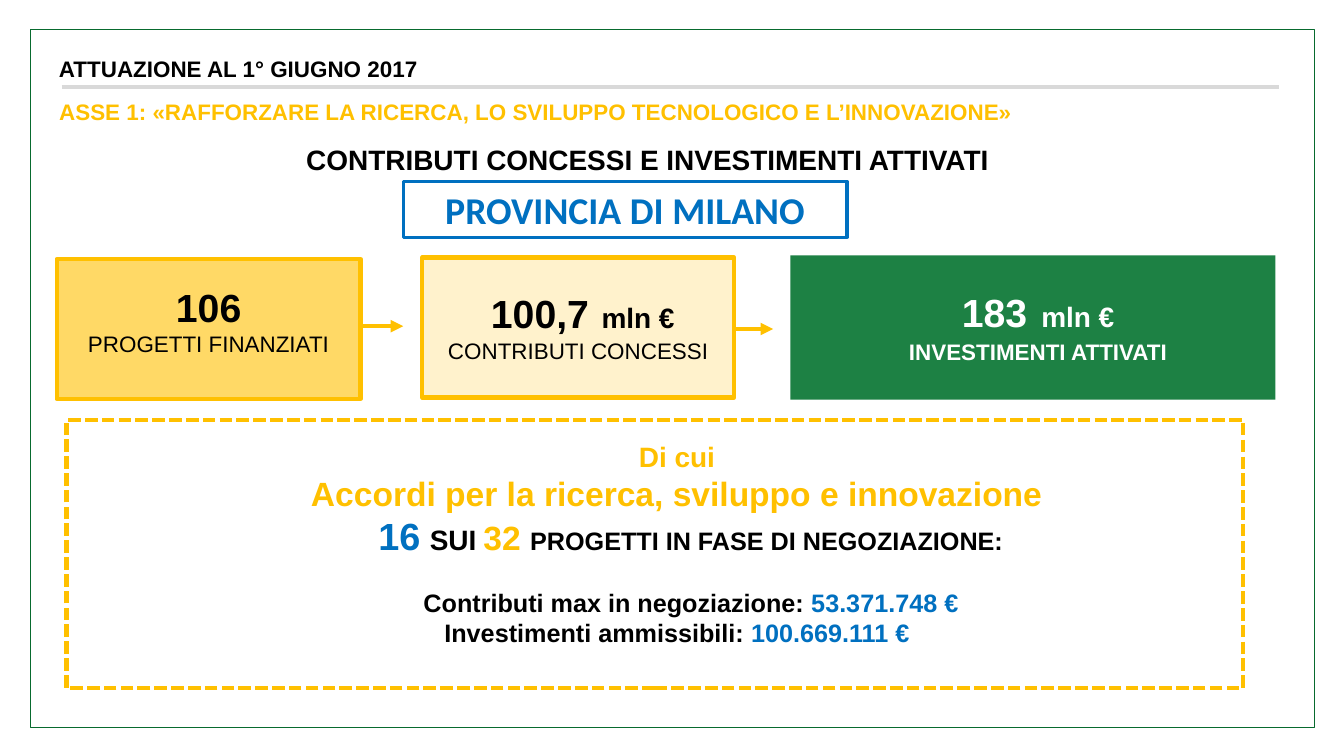
from lxml import etree
from pptx import Presentation
from pptx.dml.color import RGBColor
from pptx.enum.dml import MSO_LINE
from pptx.enum.shapes import MSO_CONNECTOR, MSO_SHAPE
from pptx.enum.text import MSO_ANCHOR, PP_ALIGN
from pptx.oxml.ns import qn
from pptx.util import Pt

RECTANGLE = MSO_SHAPE.RECTANGLE
STRAIGHT = MSO_CONNECTOR.STRAIGHT
TOP, MIDDLE = MSO_ANCHOR.TOP, MSO_ANCHOR.MIDDLE
CENTER = PP_ALIGN.CENTER
DASHED = MSO_LINE.SQUARE_DOT

BLACK, WHITE, GOLD, BLUE = "000000", "FFFFFF", "FFC000", "0070C0"

prs = Presentation()
prs.slide_width, prs.slide_height = Pt(1920), Pt(1080)
slide = prs.slides.add_slide(prs.slide_layouts[6])
shapes = slide.shapes
color = RGBColor.from_string


def write(frame, paragraphs, anchor=TOP, font="Arial"):
    """Fill a frame with (runs, left indent, space before); a run is (text, size, colour, bold)."""
    frame.word_wrap = True
    frame.vertical_anchor = anchor
    frame.margin_left = frame.margin_right = Pt(7.2)
    frame.margin_top = frame.margin_bottom = Pt(7.2)
    for index, (runs, indent, before) in enumerate(paragraphs):
        paragraph = frame.add_paragraph() if index else frame.paragraphs[0]
        paragraph.alignment = CENTER
        if indent:
            paragraph._p.get_or_add_pPr().set("marL", str(Pt(indent)))
        if before:
            paragraph.space_before = Pt(before)
        for text, size, ink, bold in runs:
            run = paragraph.add_run()
            run.text = text
            run.font.name, run.font.size, run.font.bold = font, Pt(size), bold
            run.font.color.rgb = color(ink)


def add_box(bounds, fill=None, outline=None, weight=6):
    box = shapes.add_shape(RECTANGLE, *map(Pt, bounds))
    box.shadow.inherit = False
    if fill:
        box.fill.solid()
        box.fill.fore_color.rgb = color(fill)
    else:
        box.fill.background()
    if outline:
        box.line.color.rgb = color(outline)
        box.line.width = Pt(weight)
    else:
        box.line.fill.background()
    return box


# Header rule and the arrows that run out from under the boxes
for left, right, y, ink, has_head in [
    (88, 1827, 124, "D9D9D9", False),
    (281, 576, 466, GOLD, True),
    (809, 1104.5, 470, GOLD, True),
]:
    rule = shapes.add_connector(STRAIGHT, Pt(left), Pt(y), Pt(right), Pt(y))
    rule.line.color.rgb = color(ink)
    rule.line.width = Pt(6)
    if has_head:
        etree.SubElement(rule.line._get_or_add_ln(), qn("a:tailEnd"), type="triangle")
    etree.SubElement(rule._element.spPr, qn("a:effectLst"))

add_box((44, 42, 1833, 996.5), outline="086A2E", weight=1)
accords = add_box((95, 600, 1681, 383), WHITE, GOLD)
accords.line.dash_style = DASHED

# Headings
for bounds, text, size, ink in [
    ((73, 71, 535, 53), "ATTUAZIONE AL 1° GIUGNO 2017", 32, BLACK),
    ((48, 132.5, 1435, 53),
     "ASSE 1: «RAFFORZARE LA RICERCA, LO SVILUPPO TECNOLOGICO E L’INNOVAZIONE»", 32, GOLD),
    ((420, 197, 1010, 85), "CONTRIBUTI CONCESSI E INVESTIMENTI ATTIVATI", 40, BLACK),
]:
    heading = shapes.add_textbox(*map(Pt, bounds))
    write(heading.text_frame, [([(text, size, ink, True)], 0, 0)])

province = add_box((576, 259, 634, 80), outline=BLUE, weight=4.5)
write(province.text_frame, [([("PROVINCIA DI MILANO", 54, BLUE, True)], 0, 0)], font="Calibri")

# Key figures: box, text area, fill, outline, ink, number, space size, unit, label, bold label, indent
for bounds, area, fill, outline, ink, number, gap, unit, label, bold, indent in [
    ((81, 370, 434, 200), (81, 397, 434, 121), "FFD966", GOLD, BLACK,
     "106", 0, "", "PROGETTI FINANZIATI", False, 0),
    ((603, 368, 446, 200), (603, 397, 446, 131), "FFF2CC", GOLD, BLACK,
     "100,7", 64, "mln €", "CONTRIBUTI CONCESSI", False, 13),
    ((1129, 365, 693, 206), (1202, 388, 562, 141), "1D8144", None, WHITE,
     "183", 72, "mln €", "INVESTIMENTI ATTIVATI", True, 0),
]:
    add_box(bounds, fill, outline)
    figure = [(number, 56, ink, True)]
    if unit:
        figure += [(" ", gap, ink, True), (unit, 40, ink, True)]
    caption = shapes.add_textbox(*map(Pt, area))
    write(caption.text_frame, [(figure, indent, 0), ([(label, 32, ink, bold)], 0, 0)], MIDDLE)

# Research agreements
details = shapes.add_textbox(Pt(112), Pt(620), Pt(1710), Pt(318))
write(details.text_frame, [
    ([("Di cui", 40, GOLD, True)], 0, 0),
    ([("Accordi per la ricerca, sviluppo e innovazione", 48, GOLD, True)], 0, 0),
    ([("16", 54, BLUE, True), (" ", 48, BLUE, True), ("SUI", 40, BLACK, True),
      (" ", 36, GOLD, True), ("32 ", 48, GOLD, True),
      ("PROGETTI IN FASE DI NEGOZIAZIONE:", 36, BLACK, True)], 40, 0),
    ([("Contributi max in negoziazione: ", 36, BLACK, True),
      ("53.371.748 €", 36, BLUE, True)], 40, 41.4),
    ([("Investimenti ammissibili: ", 36, BLACK, True),
      ("100.669.111 €", 36, BLUE, True)], 0, 0),
])

prs.save("out.pptx")
